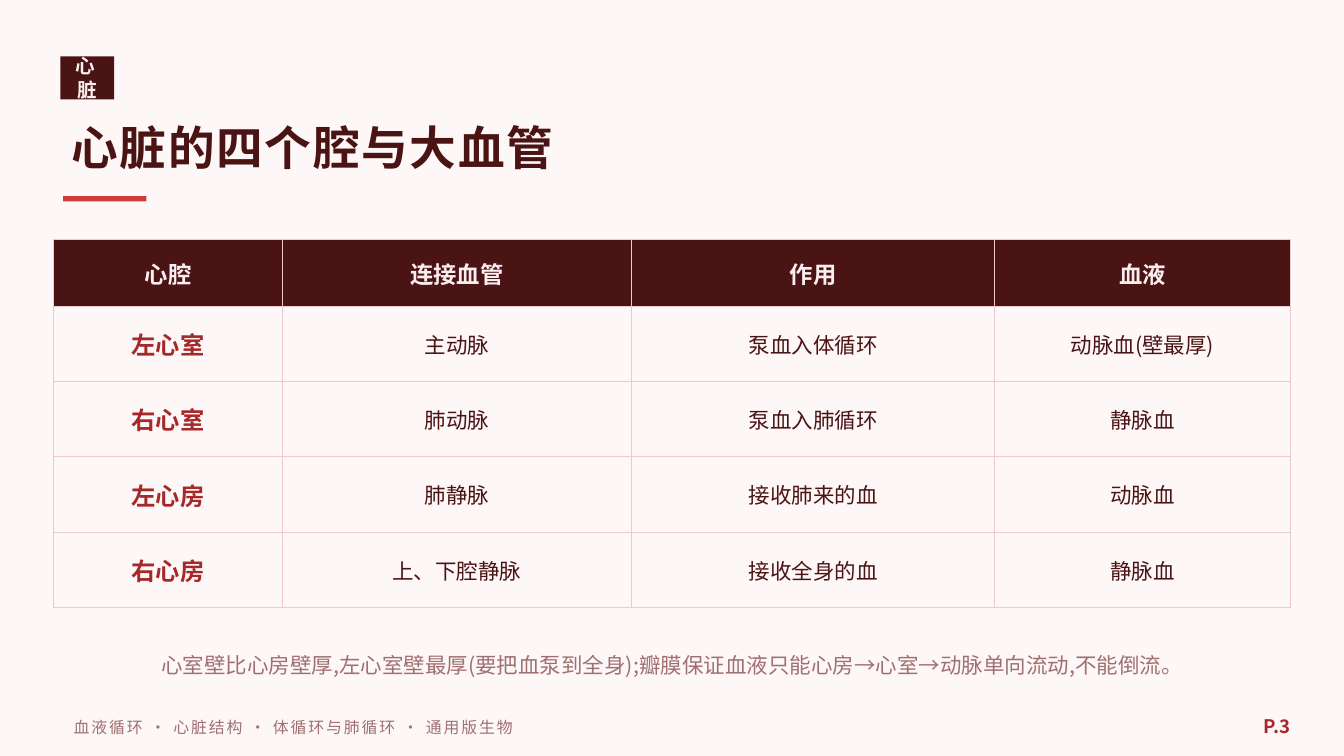
from lxml.etree import SubElement
from pptx import Presentation
from pptx.dml.color import RGBColor
from pptx.enum.shapes import MSO_SHAPE
from pptx.enum.text import MSO_ANCHOR, MSO_AUTO_SIZE, PP_ALIGN
from pptx.oxml.ns import qn
from pptx.util import Emu, Pt

PX = 4572  # 200 px to the inch
FONT = "Noto Sans CJK SC"
DARK, RED, ACCENT = "4A1414", "A62828", "CF3B3B"
PALE, PAPER, MUTED, GRID = "FBEEF0", "FEF7F8", "A07070", "EBC9CD"

COLUMNS = [340, 520, 540, 440]
ROWS = [100] + [112] * 4
CHAMBERS = [
    ["心腔", "连接血管", "作用", "血液"],
    ["左心室", "主动脉", "泵血入体循环", "动脉血(壁最厚)"],
    ["右心室", "肺动脉", "泵血入肺循环", "静脉血"],
    ["左心房", "肺静脉", "接收肺来的血", "动脉血"],
    ["右心房", "上、下腔静脉", "接收全身的血", "静脉血"],
]


def px(*lengths):
    return [Emu(n * PX) for n in lengths]


def rgb(color):
    return RGBColor.from_string(color)


def paint(fill, color):
    fill.solid()
    fill.fore_color.rgb = rgb(color)


def write(tf, text, size, color, bold=False, align=PP_ALIGN.LEFT, spacing=0):
    """Fill a text frame with one paragraph; spacing is in points."""
    p = tf.paragraphs[0]
    p.text = text
    p.alignment = align
    f = p.font
    f.name, f.size, f.bold = FONT, Pt(size), bold
    f.color.rgb = rgb(color)
    props = p._p.pPr.find(qn("a:defRPr"))
    props.find(qn("a:latin")).addnext(props.makeelement(qn("a:ea"), typeface=FONT))
    if spacing:
        props.set("spc", str(spacing * 100))


def add_text(s, box, text, size, color, **style):
    tf = s.shapes.add_textbox(*px(*box)).text_frame
    tf.word_wrap = True
    tf.vertical_anchor = MSO_ANCHOR.MIDDLE
    write(tf, text, size, color, **style)


def add_bar(s, box, color):
    sp = s.shapes.add_shape(MSO_SHAPE.RECTANGLE, *px(*box))
    sp.shadow.inherit = False
    paint(sp.fill, color)
    sp.line.fill.background()


def add_borders(cell):
    props = cell._tc.get_or_add_tcPr()
    for i, side in enumerate(("lnL", "lnR", "lnT", "lnB")):
        ln = props.makeelement(qn(f"a:{side}"), w=str(Pt(0.75)))
        fill = SubElement(ln, qn("a:solidFill"))
        SubElement(fill, qn("a:srgbClr"), val=GRID)
        props.insert(i, ln)


def add_header(s, x, y, w):
    add_bar(s, (x, y, 80, 64), DARK)
    add_text(s, (x, y - 2, 80, 68), "心脏", 10.5, PALE, bold=True,
             align=PP_ALIGN.CENTER, spacing=2)
    title = s.shapes.title
    title.left, title.top, title.width, title.height = px(x - 4, y + 72, w, 124)
    tf = title.text_frame
    tf.auto_size = MSO_AUTO_SIZE.NONE
    tf.vertical_anchor = MSO_ANCHOR.MIDDLE
    write(tf, "心脏的四个腔与大血管", 25, DARK, bold=True, spacing=1)
    add_bar(s, (x + 4, y + 208, 124, 8), ACCENT)


def add_chamber_table(s, x, y):
    frame = s.shapes.add_table(len(ROWS), len(COLUMNS),
                               *px(x, y, sum(COLUMNS), sum(ROWS)))
    table = frame.table
    for column, width in zip(table.columns, px(*COLUMNS)):
        column.width = width
    for row, height in zip(table.rows, px(*ROWS)):
        row.height = height
    for r, texts in enumerate(CHAMBERS):
        for c, text in enumerate(texts):
            cell = table.cell(r, c)
            paint(cell.fill, PAPER if r else DARK)
            add_borders(cell)
            cell.vertical_anchor = MSO_ANCHOR.MIDDLE
            if r == 0:
                size, color = 12.5, PALE
            elif c == 0:
                size, color = 13, RED
            else:
                size, color = 11.5, DARK
            write(cell.text_frame, text, size, color, bold=r == 0 or c == 0,
                  align=PP_ALIGN.CENTER)


def add_footer(s, x, y, w):
    add_text(s, (x, y + 4, 1300, 60), "血液循环 · 心脏结构 · 体循环与肺循环 · 通用版生物",
             8.5, MUTED, spacing=1)
    add_text(s, (x + w - 120, y, 120, 64), "P.3", 10, RED, bold=True,
             align=PP_ALIGN.RIGHT)


def main():
    prs = Presentation()
    prs.slide_width, prs.slide_height = px(2000, 1125)
    s = prs.slides.add_slide(prs.slide_layouts[5])
    paint(s.background.fill, PAPER)
    add_header(s, 90, 84, 1800)
    add_chamber_table(s, 80, 356)
    add_text(s, (100, 940, 1800, 100),
             "心室壁比心房壁厚,左心室壁最厚(要把血泵到全身);"
             "瓣膜保证血液只能心房→心室→动脉单向流动,不能倒流。",
             11.5, MUTED, align=PP_ALIGN.CENTER)
    add_footer(s, 90, 1048, 1850)
    prs.save("out.pptx")


if __name__ == "__main__":
    main()
